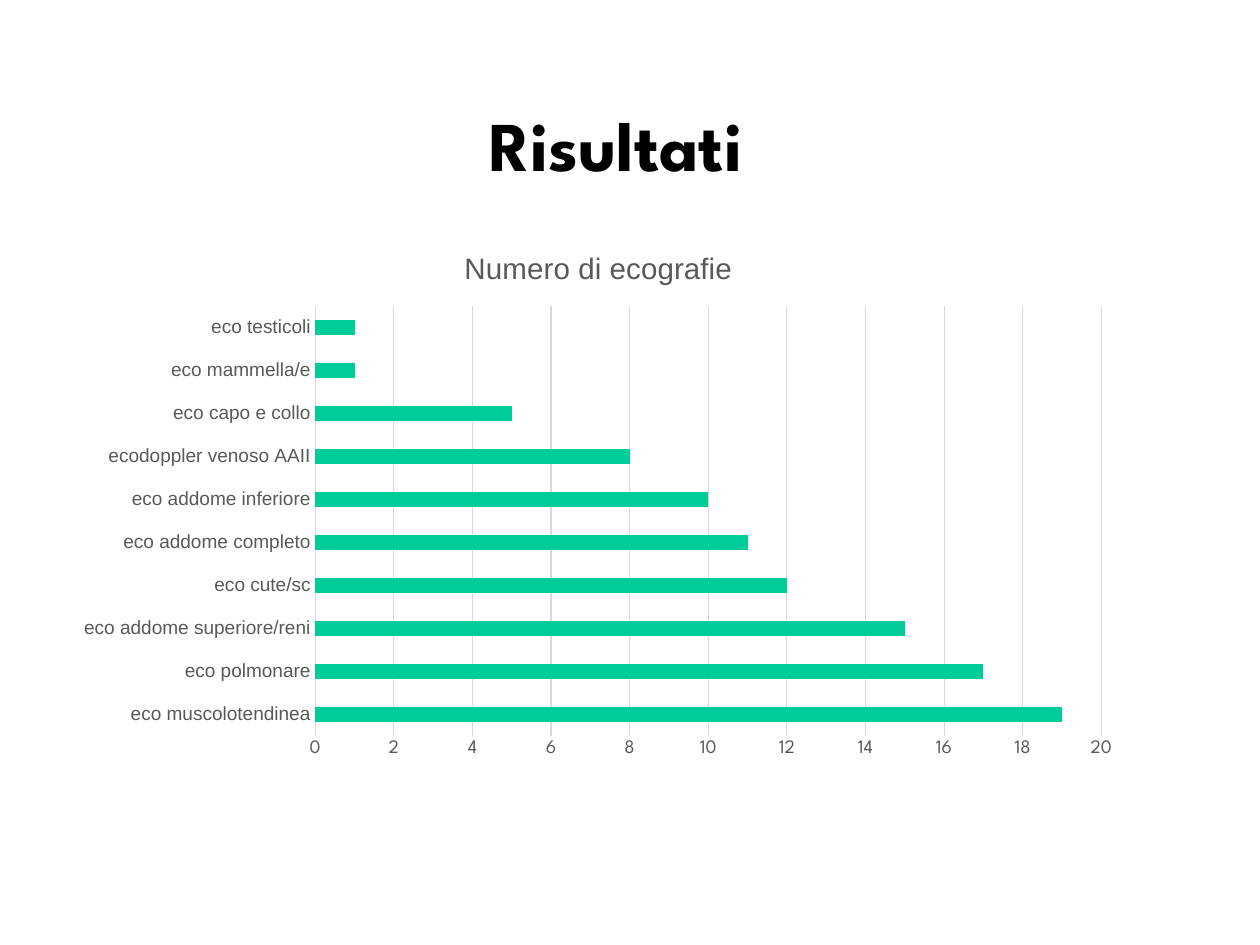
"""Build a results slide with a horizontal bar chart of ultrasound counts."""
from lxml import etree
from pptx import Presentation
from pptx.chart.data import CategoryChartData
from pptx.dml.color import RGBColor
from pptx.enum.chart import XL_CHART_TYPE, XL_TICK_MARK
from pptx.enum.text import MSO_ANCHOR, PP_ALIGN
from pptx.oxml.ns import qn
from pptx.util import Pt

BAR_CLUSTERED = XL_CHART_TYPE.BAR_CLUSTERED
NO_TICK = XL_TICK_MARK.NONE
MIDDLE = MSO_ANCHOR.MIDDLE
CENTER = PP_ALIGN.CENTER

BLACK = RGBColor(0x00, 0x00, 0x00)
GREY = RGBColor(0x59, 0x59, 0x59)
LIGHT_GREY = RGBColor(0xD9, 0xD9, 0xD9)
GREEN = RGBColor(0x00, 0xCC, 0x99)
HEADING_FONT = "League Spartan"
BODY_FONT = "Arial"

CHART_WIDTH = Pt(674.6)
CHART_HEIGHT = Pt(342)
EXAM_COUNTS = {
    "eco muscolotendinea": 19,
    "eco polmonare": 17,
    "eco addome superiore/reni": 15,
    "eco cute/sc": 12,
    "eco addome completo": 11,
    "eco addome inferiore": 10,
    "ecodoppler venoso AAII": 8,
    "eco capo e collo": 5,
    "eco mammella/e": 1,
    "eco testicoli": 1,
}


def style_font(font, name, size, color, bold=False):
    font.name = name
    font.size = Pt(size)
    font.bold = bold
    font.color.rgb = color


def style_line(line, color):
    line.color.rgb = color
    line.width = Pt(0.75)


def place_in_chart(chart, tag, index, **settings):
    parent = chart.element.find(".//" + qn(tag))
    layout = parent.find(qn("c:layout"))
    if layout is None:
        layout = etree.Element(qn("c:layout"))
        parent.insert(index, layout)
    manual = etree.SubElement(layout, qn("c:manualLayout"))
    for name, value in settings.items():
        etree.SubElement(manual, qn(f"c:{name}")).set("val", str(value))


def add_heading(slide, text):
    shape = slide.shapes.add_textbox(Pt(39.6), Pt(43.6), Pt(697), Pt(99.4))
    frame = shape.text_frame
    frame.word_wrap = True
    frame.vertical_anchor = MIDDLE
    frame.margin_left = frame.margin_right = 0
    frame.margin_top = frame.margin_bottom = 0
    paragraph = frame.paragraphs[0]
    paragraph.alignment = CENTER
    paragraph.line_spacing = 0.93
    run = paragraph.add_run()
    run.text = text
    style_font(run.font, HEADING_FONT, 44, BLACK, bold=True)


def style_axis(axis, font_name):
    axis.major_tick_mark = axis.minor_tick_mark = NO_TICK
    style_font(axis.tick_labels.font, font_name, 12, GREY)


def add_chart_title(chart, text):
    chart.has_title = True
    run = chart.chart_title.text_frame.paragraphs[0].add_run()
    run.text = text
    style_font(run.font, BODY_FONT, 18.6, GREY)
    place_in_chart(chart, "c:title", 1, xMode="edge", yMode="edge",
                   x=Pt(249.6) / CHART_WIDTH, y=Pt(10.8) / CHART_HEIGHT)


def add_exam_chart(slide):
    data = CategoryChartData()
    data.categories = list(EXAM_COUNTS)
    data.add_series("Series 1", list(EXAM_COUNTS.values()))
    frame = slide.shapes.add_chart(
        BAR_CLUSTERED, Pt(39.6), Pt(142.6), CHART_WIDTH, CHART_HEIGHT, data)
    chart = frame.chart
    chart.has_legend = False
    style_font(chart.font, BODY_FONT, 10, BLACK)
    add_chart_title(chart, "Numero di ecografie")

    style_axis(chart.category_axis, BODY_FONT)
    style_line(chart.category_axis.format.line, LIGHT_GREY)

    counts = chart.value_axis
    style_axis(counts, HEADING_FONT)
    counts.minimum_scale, counts.maximum_scale, counts.major_unit = 0, 20, 2
    counts.format.line.fill.background()
    style_line(counts.major_gridlines.format.line, LIGHT_GREY)

    plot = chart.plots[0]
    plot.gap_width = 182
    plot.vary_by_categories = False
    fill = plot.series[0].format.fill
    fill.solid()
    fill.fore_color.rgb = GREEN
    place_in_chart(chart, "c:plotArea", 0, layoutTarget="inner",
                   xMode="edge", yMode="edge",
                   x=Pt(159) / CHART_WIDTH, y=Pt(50) / CHART_HEIGHT,
                   w=Pt(495.2) / CHART_WIDTH, h=Pt(270.9) / CHART_HEIGHT)


def main():
    presentation = Presentation()
    presentation.slide_width = Pt(793.7)
    presentation.slide_height = Pt(595.28)
    slide = presentation.slides.add_slide(presentation.slide_layouts[6])
    add_heading(slide, "Risultati")
    add_exam_chart(slide)
    presentation.save("out.pptx")


if __name__ == "__main__":
    main()
